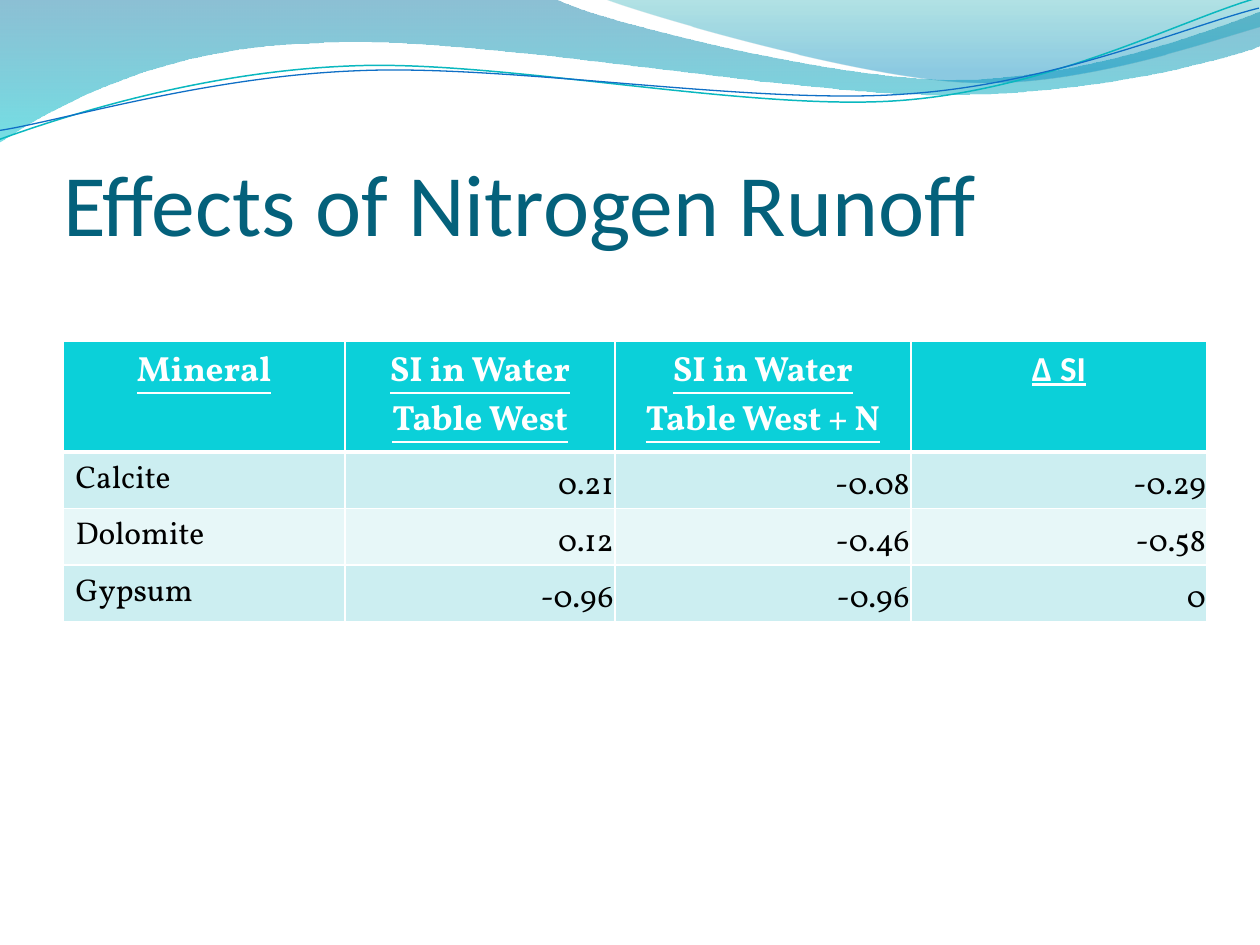
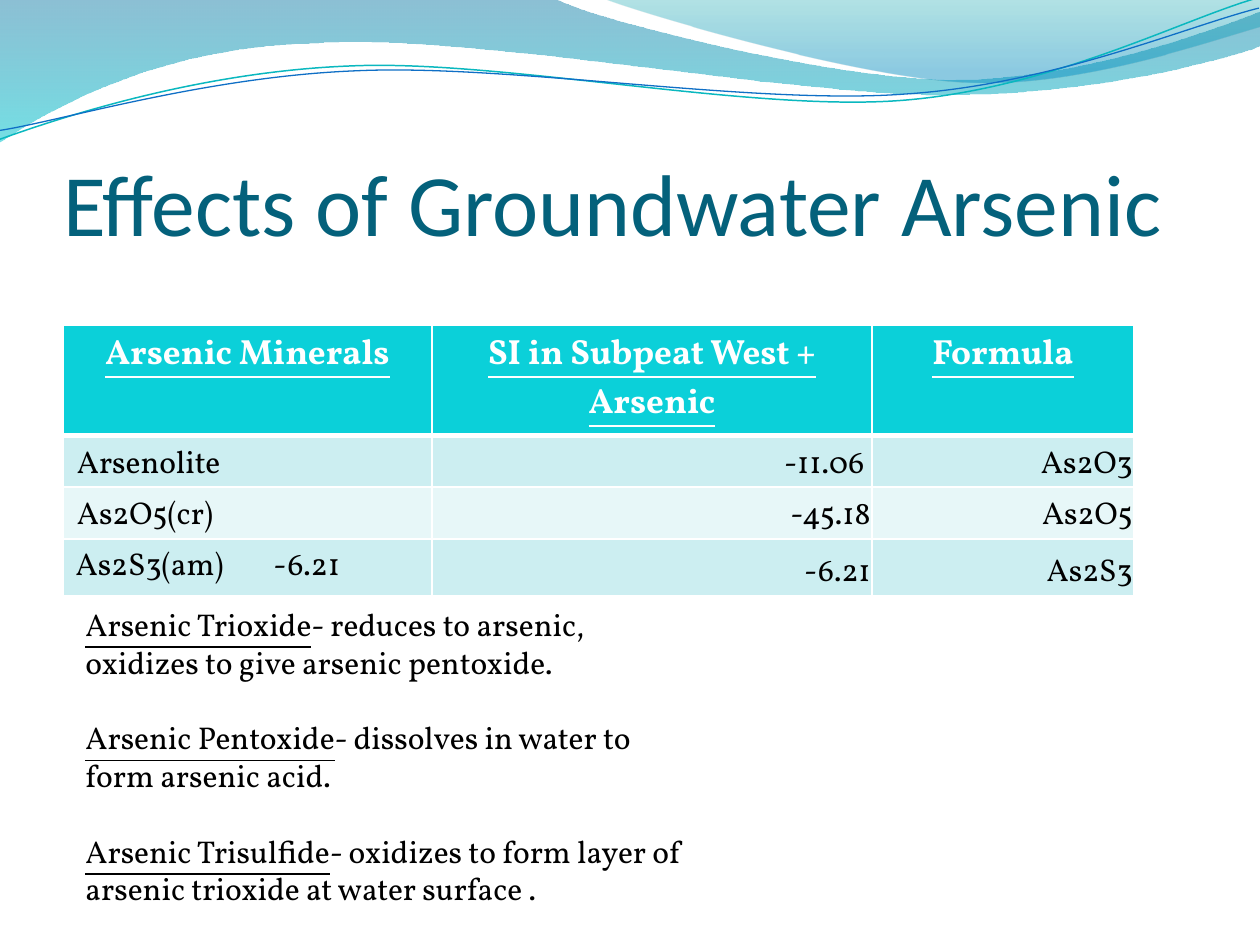
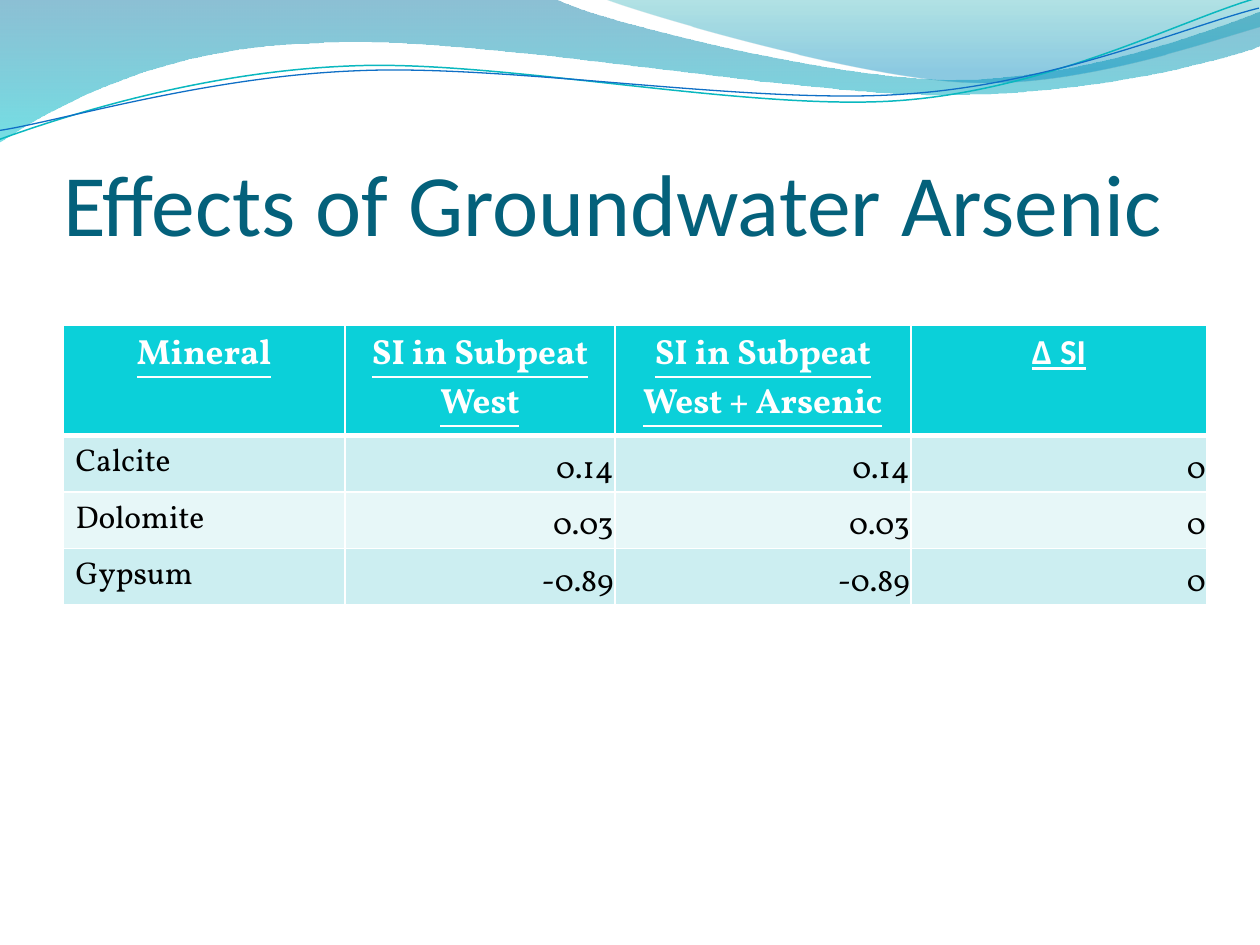
from dataclasses import dataclass

from lxml import etree
from pptx import Presentation, util as u
from pptx.dml.color import RGBColor
from pptx.enum import text
from pptx.oxml import ns


@dataclass(frozen=True)
class Theme:
    title_font: str = "Calibri"
    body_font: str = "Vollkorn"
    title_size: float = 50
    header_size: float = 20
    body_size: float = 18
    body_pitch: float = 21.6
    title: str = "04617B"
    ink: str = "000000"
    white: str = "FFFFFF"
    header: str = "0BD0D9"
    bands: tuple = ("CCEEF1", "E7F7F8")
    # stops: position, colour, opacity in percent
    wide_wave: tuple = ((0, "0074A1", 45), (100, "00C6CF", 55))
    right_wave: tuple = ((0, "00A1A9", 30), (80, "008BBF", 45))
    teal_line: tuple = ("0AB8BF", 0.85)
    blue_line: tuple = ("0F6FC6", 0.75)
    line_tilt: float = 357.3


THEME = Theme()

# Each outline: a start point, then lines (x, y) and cubic curves (three points)
FILLED_WAVES = [
    (THEME.wide_wave, [
        (0, 0), (4.4, -0.01),
        (4.76, 0.17, 6.64, 0.63, 7.58, 0.63), (8.53, 0.63, 9.58, 0.26, 10, 0.09),
        (10.01, 0.36),
        (9.83, 0.44, 8.7, 0.76, 7.46, 0.75), (6.22, 0.75, 3.82, 0.28, 2.57, 0.34),
        (1.29, 0.36, 0.46, 0.83, -0.01, 1.13)]),
    (THEME.right_wave, [
        (4.79, -0.01),
        (5.09, 0.11, 6.82, 0.62, 7.69, 0.65), (8.56, 0.69, 9.61, 0.32, 10, 0.21),
        (10, 0)]),
]
# Outlines before the tilt
LINE_WAVES = [
    (THEME.teal_line, [
        (-0.02, 0.87), (0.47, 0.72, 1.58, 0.41, 2.78, 0.42),
        (3.96, 0.42, 5.91, 0.93, 7.12, 0.9), (8.32, 0.87, 9.4, 0.36, 10, 0.22)]),
    (THEME.blue_line, [
        (-0.02, 0.8), (0.46, 0.75, 1.64, 0.45, 2.83, 0.46),
        (4.03, 0.46, 5.96, 0.88, 7.16, 0.85), (8.35, 0.83, 9.42, 0.42, 10.01, 0.3)]),
]

MINERAL_COLUMNS = [2.24, 2.14, 2.35, 2.35]
PAGES = [
    ("Effects of Nitrogen Runoff", 2.71, MINERAL_COLUMNS, [
        ["Mineral", "SI in Water Table West", "SI in Water Table West + N", "Δ SI"],
        ["Calcite", "0.21", "-0.08", "-0.29"],
        ["Dolomite", "0.12", "-0.46", "-0.58"],
        ["Gypsum", "-0.96", "-0.96", "0"]]),
    ("Effects of Groundwater Arsenic", 2.58, [2.93, 3.49, 2.08], [
        ["Arsenic Minerals", "SI in Subpeat West + Arsenic", "Formula"],
        ["Arsenolite", "-11.06 ", "As2O3"],
        ["As2O5(cr)", "-45.18", "As2O5"],
        ["As2S3(am)\t-6.21", "-6.21", "As2S3"]]),
    ("Effects of Groundwater Arsenic", 2.58, MINERAL_COLUMNS, [
        ["Mineral", "SI in Subpeat West", "SI in Subpeat West + Arsenic", "Δ SI"],
        ["Calcite", "0.14", "0.14", "0"],
        ["Dolomite", "0.03", "0.03", "0"],
        ["Gypsum", "-0.89", "-0.89", "0"]]),
]
TIGHT_LABELS = ("Arsenolite", "As2O5(cr)")
ARSENIC_NOTES = [
    ("Arsenic Trioxide", "- reduces to arsenic, oxidizes to give arsenic pentoxide."),
    ("Arsenic Pentoxide", "- dissolves in water to form arsenic acid."),
    ("Arsenic Trisulfide",
     "- oxidizes to form layer of arsenic trioxide at water surface ."),
]


def add_span(para, words, size, color, font=THEME.body_font, bold=False, underline=False):
    span = para.add_run()
    span.text = words
    span.font.name = font
    span.font.size = u.Pt(size)
    span.font.color.rgb = RGBColor.from_string(color)
    span.font.bold = bold
    span.font.underline = underline


def add_wave(page, outline, closed):
    """Draw the outline's points as lines, then join each curve's three into one curve."""
    places = [(u.Inches(step[i]), u.Inches(step[i + 1]))
              for step in outline for i in range(0, len(step), 2)]
    builder = page.shapes.build_freeform(*places[0])
    builder.add_line_segments(places[1:], close=closed)
    wave = builder.convert_to_shape()
    wave.shadow.inherit = False
    lines = iter(wave.element.xpath(".//a:lnTo"))
    for step in outline[1:]:
        first = next(lines)
        if len(step) == 6:
            curve = etree.Element(ns.qn("a:cubicBezTo"))
            first.addprevious(curve)
            for line in (first, next(lines), next(lines)):
                curve.append(line[0])
                line.getparent().remove(line)
    return wave


deck = Presentation()
deck.slide_width, deck.slide_height = u.Inches(10), u.Inches(7.5)
layout = deck.slide_layouts[5]
pages = [deck.slides.add_slide(layout) for _ in PAGES]

# The waves are drawn once and moved to the layout, behind its placeholders
waves = []
for stops, outline in FILLED_WAVES:
    wave = add_wave(pages[0], outline, True)
    wave.line.fill.background()
    wave.fill.gradient()
    wave.fill.gradient_angle = 270
    for stop, (position, color, _) in zip(wave.fill.gradient_stops, stops):
        stop.position = position / 100
        stop.color.rgb = RGBColor.from_string(color)
    for tone, (_, _, opacity) in zip(wave.element.xpath(".//a:gs/a:srgbClr"), stops):
        etree.SubElement(tone, ns.qn("a:alpha"), val=str(opacity * 1000))
    waves.append(wave)
for (color, width), outline in LINE_WAVES:
    wave = add_wave(pages[0], outline, False)
    wave.rotation = THEME.line_tilt
    wave.fill.background()
    wave.line.color.rgb = RGBColor.from_string(color)
    wave.line.width = u.Pt(width)
    waves.append(wave)
for number, wave in enumerate(waves):
    wave.element.xpath(".//p:cNvPr")[0].set("id", str(20 + number))
    layout.shapes.element.insert(2 + number, wave.element)

for page, (heading, table_top, widths, rows) in zip(pages, PAGES):
    title = page.shapes.title
    title.left, title.top = u.Inches(0.5), u.Inches(0.77)
    title.width, title.height = u.Inches(9), u.Inches(1.25)
    frame = title.text_frame
    frame.word_wrap = True
    frame.auto_size = text.MSO_AUTO_SIZE.NONE
    frame.vertical_anchor = text.MSO_ANCHOR.BOTTOM
    frame.margin_left = frame.margin_right = frame.margin_bottom = 0
    frame.margin_top = u.Inches(0.05)
    frame.paragraphs[0].alignment = text.PP_ALIGN.LEFT
    add_span(frame.paragraphs[0], heading, THEME.title_size, THEME.title, THEME.title_font)

    table = page.shapes.add_table(
        len(rows), len(widths), u.Inches(0.5), u.Inches(table_top),
        u.Inches(sum(widths)), u.Inches(0.41 * len(rows))).table
    table.horz_banding = False
    for column, width in zip(table.columns, widths):
        column.width = u.Inches(width)
    for row_number, row in enumerate(rows):
        table.rows[row_number].height = u.Inches(0.41)
        is_header = row_number == 0
        for column_number, words in enumerate(row):
            cell = table.cell(row_number, column_number)
            para = cell.text_frame.paragraphs[0]
            properties = cell._tc.get_or_add_tcPr()
            # The rule under the header belongs to both rows it separates
            border_widths = {"L": 1, "R": 1, "T": 3 if row_number == 1 else 1,
                             "B": 3 if is_header else 1}
            for side, points in border_widths.items():
                border = etree.SubElement(properties, ns.qn("a:ln" + side),
                                          w=str(u.Pt(points)))
                paint = etree.SubElement(border, ns.qn("a:solidFill"))
                etree.SubElement(paint, ns.qn("a:srgbClr"), val=THEME.white)
            cell.fill.solid()
            cell.fill.fore_color.rgb = RGBColor.from_string(
                THEME.header if is_header else THEME.bands[(row_number - 1) % 2])

            if is_header:
                para.alignment = text.PP_ALIGN.CENTER
                font = THEME.title_font if words == "Δ SI" else THEME.body_font
                add_span(para, words, THEME.header_size, THEME.white, font, True, True)
                continue
            is_label = column_number == 0
            if not is_label or words in TIGHT_LABELS:
                cell.vertical_anchor = text.MSO_ANCHOR.BOTTOM
                cell.margin_left = u.Inches(0.11 if is_label else 0.01)
                cell.margin_right = cell.margin_top = u.Inches(0.01)
                cell.margin_bottom = 0
            para.alignment = text.PP_ALIGN.LEFT if is_label else text.PP_ALIGN.RIGHT
            if "\t" in words:
                tabs = etree.SubElement(para._p.get_or_add_pPr(), ns.qn("a:tabLst"))
                etree.SubElement(tabs, ns.qn("a:tab"), pos=str(u.Inches(1.57)), algn="l")
            add_span(para, words, THEME.body_size, THEME.ink)

notes_box = pages[1].shapes.add_textbox(
    u.Inches(0.58), u.Inches(4.75), u.Inches(5), u.Inches(2.52))
frame = notes_box.text_frame
frame.word_wrap = True
frame.auto_size = text.MSO_AUTO_SIZE.SHAPE_TO_FIT_TEXT
for number, (compound, behaviour) in enumerate(ARSENIC_NOTES):
    para = frame.add_paragraph() if number else frame.paragraphs[0]
    para.line_spacing = u.Pt(THEME.body_pitch)
    para.space_before = u.Pt(THEME.body_pitch if number else 0)
    add_span(para, compound, THEME.body_size, THEME.ink, underline=True)
    add_span(para, behaviour, THEME.body_size, THEME.ink)

deck.save("out.pptx")
